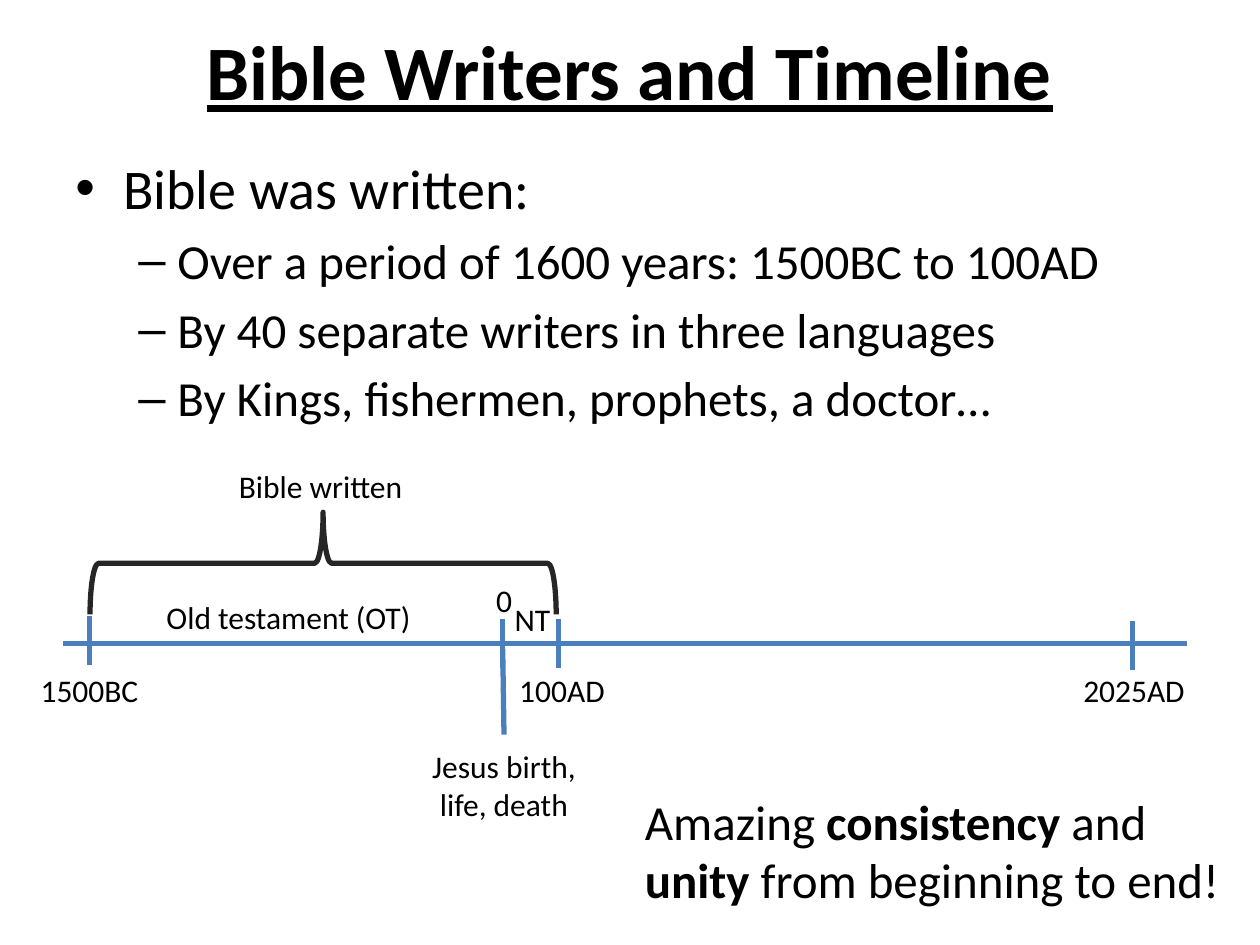
from lxml import etree
from pptx import Presentation, util as u
from pptx.dml.color import RGBColor
from pptx.enum import shapes, text
from pptx.oxml.ns import qn

BLACK = RGBColor(0x00, 0x00, 0x00)
BLUE = RGBColor(0x4B, 0x7E, 0xBC)
CHARCOAL = RGBColor(0x26, 0x26, 0x26)

deck = Presentation()
deck.slide_width, deck.slide_height = u.Inches(10), u.Inches(7.5)
slide = deck.slides.add_slide(deck.slide_layouts[6])
COL, ROW = deck.slide_width / 10, deck.slide_height / 7.5


def write(left, top, width, height, lines, size=18, align=text.PP_ALIGN.CENTER):
    box = slide.shapes.add_textbox(
        int(left * COL), int(top * ROW), int(width * COL), int(height * ROW))
    frame = box.text_frame
    frame.text = lines
    frame.word_wrap = True
    for paragraph in frame.paragraphs:
        paragraph.alignment = align
        for run in paragraph.runs:
            run.font.name = "Calibri"
            run.font.size = u.Pt(size)
            run.font.color.rgb = BLACK
    return frame


def rule(x1, y1, x2, y2):
    line = slide.shapes.add_connector(
        shapes.MSO_CONNECTOR.STRAIGHT,
        int(x1 * COL), int(y1 * ROW), int(x2 * COL), int(y2 * ROW))
    line.line.color.rgb = BLUE
    line.line.width = u.Pt(3)
    etree.SubElement(line._element.spPr, qn("a:effectLst"))


title = write(0.5, 0.08, 9, 0.95, "Bible Writers and Timeline", 44)
title.vertical_anchor = text.MSO_ANCHOR.MIDDLE
heading = title.paragraphs[0].runs[0].font
heading.bold = heading.underline = True

facts = write(0.5, 1.17, 9, 2.33, "\n".join([
    "Bible was written:",
    "Over a period of 1600 years: 1500BC to 100AD",
    "By 40 separate writers in three languages",
    "By Kings, fishermen, prophets, a doctor…",
]), 28, text.PP_ALIGN.LEFT)
for index, fact in enumerate(facts.paragraphs):
    level = min(index, 1)
    indent, hanging, mark = [(0.38, 0.38, "•"), (0.81, 0.31, "–")][level]
    fact.level = level
    if level:
        fact.space_before = u.Pt(5.6)
    props = fact._p.get_or_add_pPr()
    props.set("marL", str(u.Inches(indent)))
    props.set("indent", str(-u.Inches(hanging)))
    etree.SubElement(props, qn("a:buFont"), typeface="Arial")
    etree.SubElement(props, qn("a:buChar"), char=mark)
facts.paragraphs[0].runs[0].font.size = u.Pt(32)

rule(0.5, 5.11, 9.42, 5.11)
for year, tick_top in [(0.71, 4.89), (3.99, 4.91), (4.43, 4.91), (8.99, 4.93)]:
    rule(year, tick_top + 0.39, year, tick_top)
rule(4, 5.83, 3.99, 5.15)

for left, top, width, label in [
    (0.17, 5.28, 1.08, "1500BC"),
    (3.46, 4.56, 1.08, "0"),
    (3.92, 5.28, 1.08, "100AD"),
    (8.46, 5.28, 1.08, "2025AD"),
    (1.61, 3.66, 1.87, "Bible written"),
    (1.08, 4.7, 2.42, "Old testament (OT)"),
    (3.89, 4.71, 0.67, "NT"),
]:
    write(left, top, width, 0.4, label)
write(3.25, 5.88, 1.5, 0.71, "Jesus birth, life, death")

writing_span = slide.shapes.add_shape(
    shapes.MSO_SHAPE.RIGHT_BRACE,
    int(2.16 * COL), int(2.62 * ROW), int(0.81 * COL), int(3.7 * ROW))
writing_span.rotation = 270
writing_span.shadow.inherit = False
writing_span.fill.background()
writing_span.line.color.rgb = CHARCOAL
writing_span.line.width = u.Pt(3)

closing = write(5.02, 6.23, 4.92, 1.04, "", 28).paragraphs[0]
closing.alignment = text.PP_ALIGN.LEFT
for words, bold in [("Amazing ", False), ("consistency", True), (" and ", False),
                    ("unity", True), (" from beginning to end!", False)]:
    run = closing.add_run()
    run.text = words
    run.font.name = "Calibri"
    run.font.size = u.Pt(28)
    run.font.color.rgb = BLACK
    run.font.bold = bold

deck.save("out.pptx")
